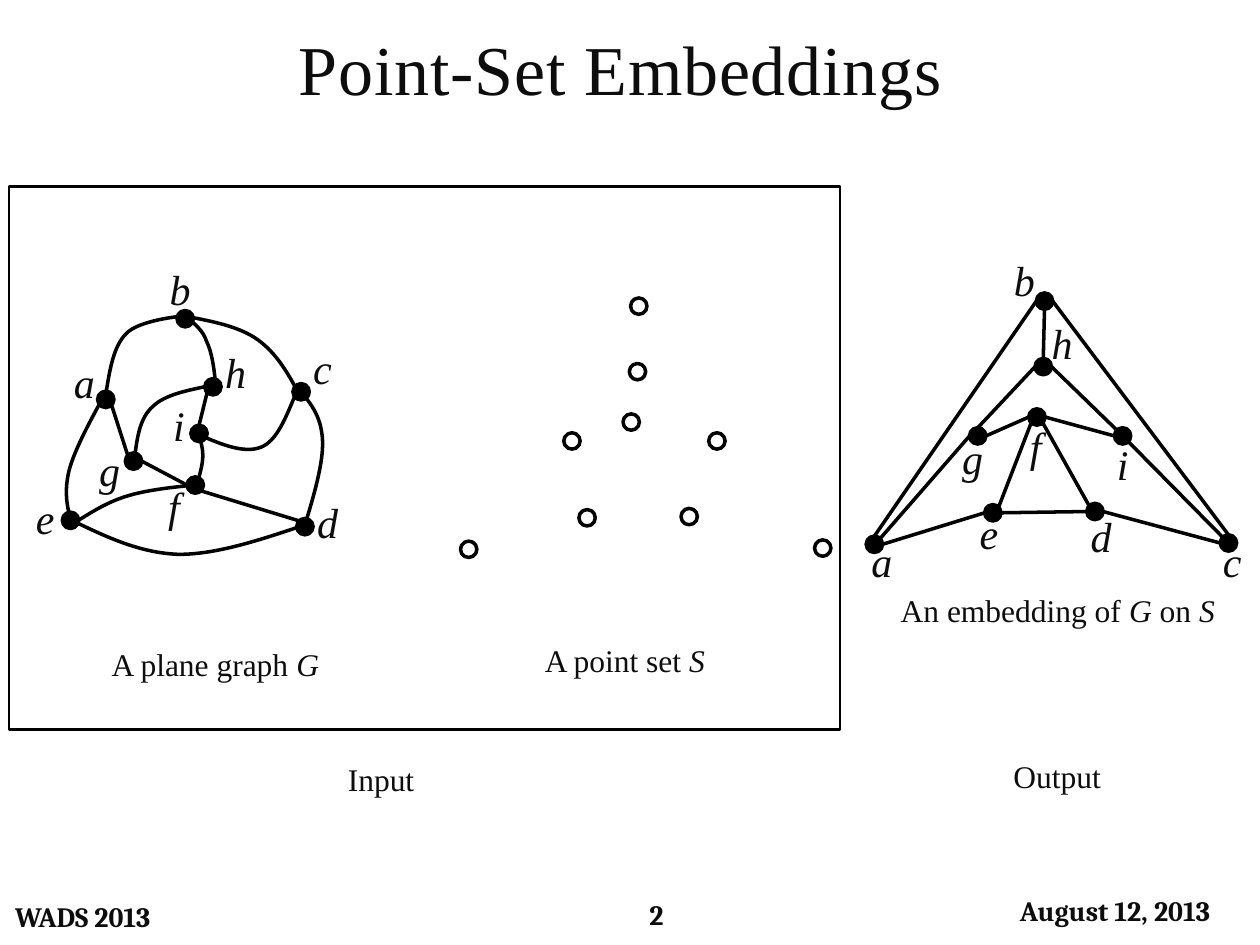
from dataclasses import dataclass

from lxml import etree
from pptx import Presentation
from pptx.dml.color import RGBColor
from pptx.enum.shapes import MSO_CONNECTOR, MSO_SHAPE
from pptx.enum.text import MSO_ANCHOR, PP_ALIGN
from pptx.oxml.ns import qn
from pptx.util import Cm, Pt

LEFT, CENTER = PP_ALIGN.LEFT, PP_ALIGN.CENTER
TOP, MIDDLE = MSO_ANCHOR.TOP, MSO_ANCHOR.MIDDLE
ELLIPSE, RECTANGLE, ROUNDED = MSO_SHAPE.OVAL, MSO_SHAPE.RECTANGLE, MSO_SHAPE.ROUNDED_RECTANGLE
STRAIGHT = MSO_CONNECTOR.STRAIGHT


@dataclass(frozen=True)
class Theme:
    ink: RGBColor = RGBColor(0x0D, 0x0D, 0x0D)
    black: RGBColor = RGBColor(0, 0, 0)
    body_font: str = "Times New Roman"
    footer_font: str = "Cambria"
    title: int = 40
    label: int = 24
    caption: int = 18
    footer: int = 16
    edge: float = 2
    frame: float = 1.25


THEME = Theme()
GRID = 2.54  # centimetres per grid unit; the slide is 10 by 7.5 units
RADIUS = 0.065
DIAGONAL = 0.046
SIDES = {
    "N": (0, -RADIUS), "S": (0, RADIUS), "W": (-RADIUS, 0), "E": (RADIUS, 0),
    "NW": (-DIAGONAL, -DIAGONAL), "NE": (DIAGONAL, -DIAGONAL),
    "SW": (-DIAGONAL, DIAGONAL), "SE": (DIAGONAL, DIAGONAL),
}

# Centres of the vertices of the plane graph G
GRAPH = {
    "a": (0.84, 3.17), "b": (1.47, 2.53), "c": (2.39, 3.11),
    "d": (2.42, 4.18), "e": (0.56, 4.13), "f": (1.55, 3.85),
    "g": (1.06, 3.66), "h": (1.69, 3.07), "i": (1.58, 3.44),
}
GRAPH_EDGES = ["g E f W", "f SE d NW", "g NW a SE", "i N h SW"]
# Start point, then two control points and an end point for each piece
GRAPH_CURVES = [
    [(0.56, 4.12), (0.53, 4.01), (0.51, 3.89), (0.55, 3.73), (0.59, 3.58), (0.7, 3.37), (0.81, 3.17)],
    [(0.84, 3.13), (0.87, 2.94), (0.9, 2.75), (1, 2.65), (1.1, 2.54), (1.44, 2.51), (1.44, 2.51)],
    [(0.59, 4.15), (0.72, 4.07), (0.84, 3.99), (1, 3.94), (1.16, 3.89), (1.35, 3.87), (1.54, 3.85)],
    [(0.57, 4.13), (0.84, 4.26), (1.11, 4.39), (1.42, 4.4), (1.73, 4.4), (2.08, 4.28), (2.44, 4.16)],
    [(1.47, 2.51), (1.68, 2.55), (1.9, 2.59), (2.05, 2.7), (2.2, 2.81), (2.29, 2.97), (2.38, 3.14)],
    [(2.41, 4.2), (2.49, 3.94), (2.57, 3.67), (2.56, 3.49), (2.55, 3.3), (2.46, 3.19), (2.37, 3.09)],
    [(1.58, 3.45), (1.76, 3.53), (1.94, 3.6), (2.07, 3.55), (2.2, 3.5), (2.27, 3.31), (2.35, 3.12)],
    [(1.71, 3.04), (1.7, 2.92), (1.68, 2.79), (1.64, 2.71), (1.61, 2.62), (1.55, 2.58), (1.5, 2.53)],
    [(1.07, 3.62), (1.09, 3.47), (1.11, 3.32), (1.21, 3.23), (1.31, 3.13), (1.49, 3.1), (1.67, 3.06)],
    [(1.57, 3.82), (1.59, 3.75), (1.61, 3.68), (1.61, 3.61), (1.61, 3.55), (1.59, 3.49), (1.57, 3.43)],
]
GRAPH_LABELS = {
    "a": (0.67, 3.03), "b": (1.43, 2.29), "c": (2.56, 2.92),
    "d": (2.6, 4.14), "e": (0.36, 4.11), "f": (1.38, 4.01),
    "g": (0.87, 3.73), "h": (1.87, 2.95), "i": (1.42, 3.37),
}

# The point set S, keyed by the vertex that the embedding puts there
POINTS = {
    "a": (3.72, 4.36), "b": (5.07, 2.43), "c": (6.53, 4.35),
    "d": (5.47, 4.1), "e": (4.66, 4.11), "f": (5.01, 3.35),
    "g": (4.54, 3.5), "h": (5.06, 2.95), "i": (5.69, 3.5),
}
EMBEDDING_SHIFT = (3.22, -0.04)
EMBEDDING_EDGES = [
    "e W a E", "b W a N", "d W e E", "g E f W", "g N h W", "c N b E", "h E i NW",
    "f E i W", "i SE c NW", "a NE g W", "d E c W", "h N b S", "e NE f SW", "d NW f SE",
]
EMBEDDING_LABELS = {
    "a": (7, 4.45), "b": (8.13, 2.22), "c": (9.78, 4.45),
    "d": (8.74, 4.25), "e": (7.85, 4.23), "f": (8.22, 3.54),
    "g": (7.72, 3.63), "h": (8.43, 2.72), "i": (8.91, 3.68),
}

# Runs (text, italic) with left, top and width
CAPTIONS = [
    ([("An embedding of ", False), ("G", True), (" on ", False), ("S", True)], 7.02, 4.64, 2.75),
    ([("A plane graph ", False), ("G", True)], 0.78, 5.07, 1.86),
    ([("A point set ", False), ("S", True)], 4.21, 5.04, 1.5),
    ([("Input", False)], 2.66, 5.98, 0.73),
    ([("Output", False)], 7.94, 5.96, 0.9),
]
FOOTERS = [
    ("WADS 2013", LEFT, (0, 7.05, 3.97, 0.45)),
    ("2", CENTER, (4.18, 7.08, 2.06, 0.35)),
    ("August 12, 2013", CENTER, (7.7, 7.05, 2.3, 0.35)),
]


def grid(*units):
    """Turn grid units into lengths."""
    return [Cm(unit * GRID) for unit in units]


def shifted(point, offset):
    return point[0] + offset[0], point[1] + offset[1]


def write(shape, runs, size, align=CENTER, anchor=MIDDLE, font=THEME.body_font, bold=False):
    """Fill a shape with one paragraph of (text, italic) runs."""
    frame = shape.text_frame
    frame.vertical_anchor = anchor
    paragraph = frame.paragraphs[0]
    paragraph.alignment = align
    for text, italic in runs:
        run = paragraph.add_run()
        run.text = text
        run.font.name, run.font.size = font, Pt(size)
        run.font.bold, run.font.italic = bold, italic
        run.font.color.rgb = THEME.ink
    return frame


def add_title(slide, text):
    title = slide.shapes.title
    title.left, title.top, title.width, title.height = grid(0, 0.15, 10, 0.77)
    frame = write(title, [(text, False)], THEME.title)
    frame.paragraphs[0].runs[0].font._element.set("spc", "50")


def add_outline(shapes, kind, box, width=None, filled=False):
    """Add a preset shape; without a width it has no line."""
    shape = shapes.add_shape(kind, *grid(*box))
    shape.shadow.inherit = False
    if filled:
        shape.fill.solid()
        shape.fill.fore_color.rgb = THEME.black
    else:
        shape.fill.background()
    if width:
        style_line(shape.line, width)
    else:
        shape.line.fill.background()
    return shape


def style_line(line, width):
    line.color.rgb = THEME.black
    line.width = Pt(width)


def add_vertices(shapes, centres, filled):
    for x, y in centres:
        box = (x - RADIUS, y - RADIUS, 2 * RADIUS, 2 * RADIUS)
        add_outline(shapes, ELLIPSE, box, THEME.edge, filled)


def add_edges(shapes, vertices, edges):
    """Join vertices; an edge names each end and the side it leaves from."""
    for edge in edges:
        start, start_side, end, end_side = edge.split()
        ends = (*shifted(vertices[start], SIDES[start_side]),
                *shifted(vertices[end], SIDES[end_side]))
        connector = shapes.add_connector(STRAIGHT, *grid(*ends))
        style_line(connector.line, THEME.edge)
        etree.SubElement(connector._element.spPr, qn("a:effectLst"))


def add_curve(shapes, points):
    """Draw an open outline and join each three points into a Bézier piece."""
    start, *others = [grid(*point) for point in points]
    builder = shapes.build_freeform(*start)
    builder.add_line_segments(others, close=False)
    curve = builder.convert_to_shape()
    curve.shadow.inherit = False
    curve.fill.background()
    style_line(curve.line, THEME.edge)
    segments = curve._element.xpath(".//a:lnTo")
    for first in range(0, len(segments), 3):
        piece = segments[first:first + 3]
        piece[0].tag = qn("a:cubicBezTo")
        for segment in piece[1:]:
            piece[0].append(segment[0])
            segment.getparent().remove(segment)


def add_labels(shapes, labels, width=0.4, height=0.36):
    for name, (x, y) in labels.items():
        box = shapes.add_textbox(*grid(x - width / 2, y - height / 2, width, height))
        frame = write(box, [(name, True)], THEME.label)
        frame.margin_left = frame.margin_right = frame.margin_top = frame.margin_bottom = 0


def add_graph(slide, vertices, edges, labels, curves=()):
    shapes = slide.shapes.add_group_shape().shapes
    add_vertices(shapes, vertices.values(), filled=True)
    add_edges(shapes, vertices, edges)
    for points in curves:
        add_curve(shapes, points)
    add_labels(shapes, labels)


def main():
    presentation = Presentation()
    presentation.slide_width, presentation.slide_height = grid(10, 7.5)
    slide = presentation.slides.add_slide(presentation.slide_layouts[5])
    add_title(slide, "Point-Set Embeddings ")
    add_outline(slide.shapes, RECTANGLE, (0.07, 1.48, 6.6, 4.31), THEME.frame)
    add_graph(slide, GRAPH, GRAPH_EDGES, GRAPH_LABELS, GRAPH_CURVES)
    add_vertices(slide.shapes, POINTS.values(), filled=False)
    embedding = {name: shifted(point, EMBEDDING_SHIFT) for name, point in POINTS.items()}
    add_graph(slide, embedding, EMBEDDING_EDGES, EMBEDDING_LABELS)
    for runs, left, top, width in CAPTIONS:
        box = slide.shapes.add_textbox(*grid(left, top, width, 0.4))
        write(box, runs, THEME.caption, anchor=TOP).word_wrap = False
    for text, align, box in FOOTERS:
        shape = add_outline(slide.shapes, ROUNDED, box)
        write(shape, [(text, False)], THEME.footer, align, font=THEME.footer_font, bold=True)
    presentation.save("out.pptx")


if __name__ == "__main__":
    main()
